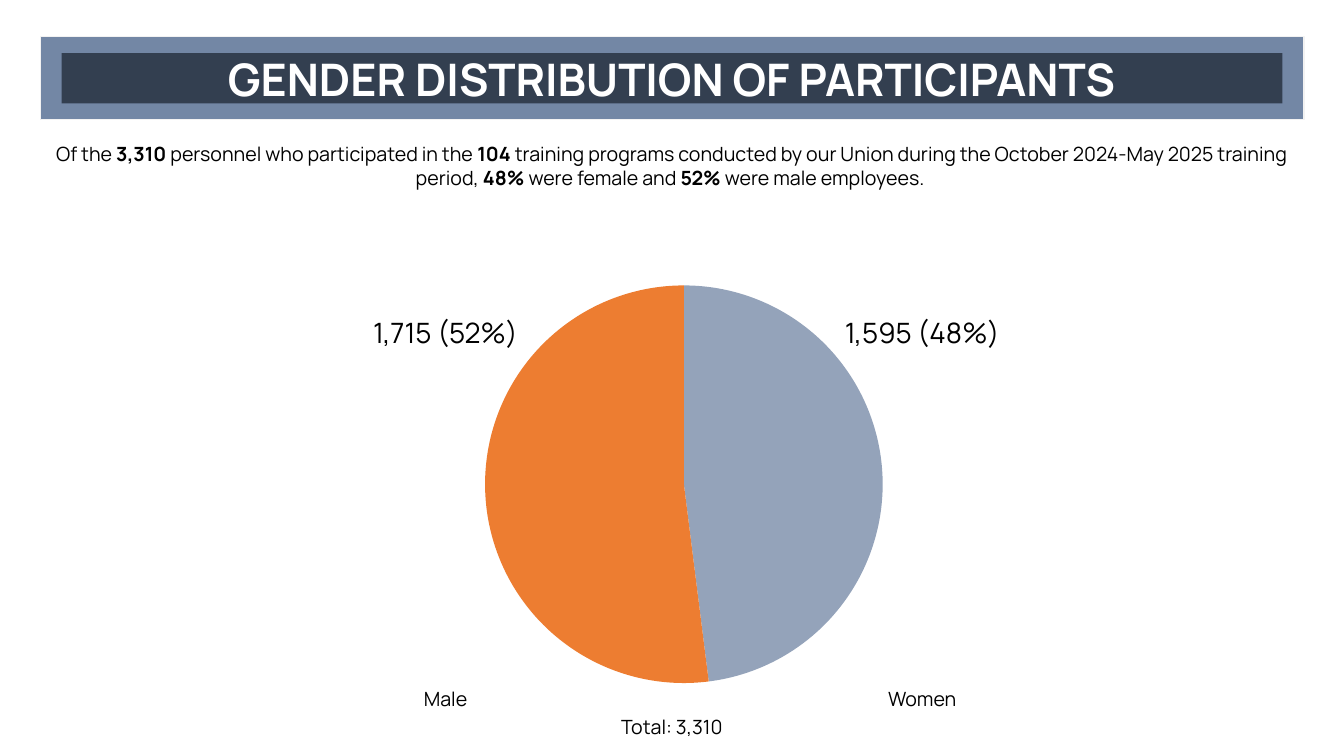
from dataclasses import dataclass

from lxml import etree
from pptx import Presentation
from pptx.chart.data import CategoryChartData
from pptx.dml.color import RGBColor
from pptx.enum.chart import XL_CHART_TYPE
from pptx.enum.shapes import MSO_SHAPE
from pptx.enum.text import MSO_ANCHOR, PP_ALIGN
from pptx.util import Pt

PIE = XL_CHART_TYPE.PIE
RECTANGLE = MSO_SHAPE.RECTANGLE
TOP, MIDDLE, BOTTOM = MSO_ANCHOR.TOP, MSO_ANCHOR.MIDDLE, MSO_ANCHOR.BOTTOM
CENTER = PP_ALIGN.CENTER
CHART_NS = "http://schemas.openxmlformats.org/drawingml/2006/chart"


@dataclass(frozen=True)
class Theme:
    font: str = "Manrope"
    chart_font: str = "Calibri"
    black: str = "000000"
    white: str = "FFFFFF"
    band: str = "7387A5"
    band_edge: str = "F2F2F2"
    title_bar: str = "333F50"
    women: str = "94A3BA"
    men: str = "ED7D31"
    title_size: int = 32
    value_size: int = 20
    body_size: int = 14
    chart_size: int = 10


THEME = Theme()

# Content: text as (words, bold) spans, labels as (words, center, top)
TITLE = [("GENDER DISTRIBUTION OF PARTICIPANTS", True)]
SUMMARY = [
    ("Of the", False),
    (" 3,310 ", True),
    ("personnel who participated in the", False),
    (" 104 ", True),
    ("training programs conducted by our Union during the "
     "October 2024-May 2025 training period,", False),
    (" 48% ", True),
    ("were female and", False),
    (" 52% ", True),
    ("were male employees. ", False),
]
SHARES = [("1", 48, THEME.women), ("2", 52, THEME.men)]
MEN_CENTER, TOTAL_CENTER, WOMEN_CENTER = 318.3, 479.9, 658.8
VALUE_LABELS = [
    ("1,715 (52%)", MEN_CENTER, 228.2),
    ("1,595 (48%)", WOMEN_CENTER, 228.2),
]
CAPTIONS = [
    ("Women", WOMEN_CENTER, 492.5),
    ("Male", MEN_CENTER, 492.5),
    ("Total: 3,310", TOTAL_CENTER, 512.6),
]

# Boxes as (left, top, width, height) in points
SLIDE_SIZE = (960, 540)
BAND_BOX = (28.8, 26.2, 902.6, 59.4)
BAR_INSET = (15.3, 11.7)
SUMMARY_BOX = (28.8, 97.9, 902.6, 41)
CHART_BOX = (141.1, 198, 694.8, 295.9)
PLOT_AREA = {"x": 0.01, "y": 0.02, "w": 0.98, "h": 0.96}
VALUE_SIZE = (150, 21.6)
CAPTION_SIZE = (120, 15.1)


def color(value):
    return RGBColor.from_string(value)


def points(box):
    return [Pt(length) for length in box]


def write_text(shape, spans, *, size, fill=THEME.black, anchor=TOP,
               margins=(7.2, 3.6), line_spacing=None):
    frame = shape.text_frame
    frame.word_wrap = True
    frame.vertical_anchor = anchor
    frame.margin_left = frame.margin_right = Pt(margins[0])
    frame.margin_top = frame.margin_bottom = Pt(margins[1])
    para = frame.paragraphs[0]
    para.alignment = CENTER
    para.line_spacing = line_spacing
    for words, bold in spans:
        span = para.add_run()
        span.text = words
        span.font.name = THEME.font
        span.font.size = Pt(size)
        span.font.bold = bold
        span.font.color.rgb = color(fill)


def add_rectangle(slide, box, fill, edge=None):
    shape = slide.shapes.add_shape(RECTANGLE, *points(box))
    shape.shadow.inherit = False
    shape.fill.solid()
    shape.fill.fore_color.rgb = color(fill)
    if edge:
        shape.line.color.rgb = color(edge)
        shape.line.width = Pt(1)
    else:
        shape.line.fill.background()
    return shape


def add_header(slide):
    add_rectangle(slide, BAND_BOX, THEME.band, THEME.band_edge)
    left, top, width, height = BAND_BOX
    across, down = BAR_INSET
    bar_box = (left + across, top + down, width - 2 * across, height - 2 * down)
    bar = add_rectangle(slide, bar_box, THEME.title_bar)
    write_text(bar, TITLE, size=THEME.title_size, fill=THEME.white, anchor=MIDDLE)


def set_plot_layout(chart):
    """Pin the inner plot area to fixed fractions of the chart."""
    plot_area = chart.plots[0]._element.getparent()
    for old in plot_area.findall(f"{{{CHART_NS}}}layout"):
        plot_area.remove(old)
    layout = etree.Element(f"{{{CHART_NS}}}layout")
    manual = etree.SubElement(layout, f"{{{CHART_NS}}}manualLayout")
    settings = {"layoutTarget": "inner", "xMode": "edge", "yMode": "edge", **PLOT_AREA}
    for name, value in settings.items():
        etree.SubElement(manual, f"{{{CHART_NS}}}{name}", val=str(value))
    plot_area.insert(0, layout)


def add_pie(slide):
    data = CategoryChartData()
    data.categories = [name for name, _, _ in SHARES]
    data.add_series("Series 1", [share for _, share, _ in SHARES])
    chart = slide.shapes.add_chart(PIE, *points(CHART_BOX), data).chart
    chart.has_title = False
    chart.has_legend = False
    chart.font.name = THEME.chart_font
    chart.font.size = Pt(THEME.chart_size)
    chart.font.color.rgb = color(THEME.black)
    plot = chart.plots[0]
    plot.vary_by_categories = True
    for index, (_, _, fill) in enumerate(SHARES):
        slice_format = plot.series[0].points[index].format
        slice_format.fill.solid()
        slice_format.fill.fore_color.rgb = color(fill)
        slice_format.line.fill.background()
    set_plot_layout(chart)


def add_text(slide, box, spans, **text_format):
    write_text(slide.shapes.add_textbox(*points(box)), spans, **text_format)


def add_labels(slide, labels, label_size, **text_format):
    """Place one-line labels, each centred on its own x position."""
    width, height = label_size
    for words, center, top in labels:
        add_text(slide, (center - width / 2, top, width, height), [(words, False)],
                 margins=(0, 0), line_spacing=0.9, **text_format)


def main():
    deck = Presentation()
    deck.slide_width, deck.slide_height = points(SLIDE_SIZE)
    slide = deck.slides.add_slide(deck.slide_layouts[6])
    add_header(slide)
    add_pie(slide)
    add_labels(slide, VALUE_LABELS, VALUE_SIZE, size=THEME.value_size, anchor=BOTTOM)
    add_labels(slide, CAPTIONS, CAPTION_SIZE, size=THEME.body_size)
    add_text(slide, SUMMARY_BOX, SUMMARY, size=THEME.body_size)
    deck.save("out.pptx")


if __name__ == "__main__":
    main()
